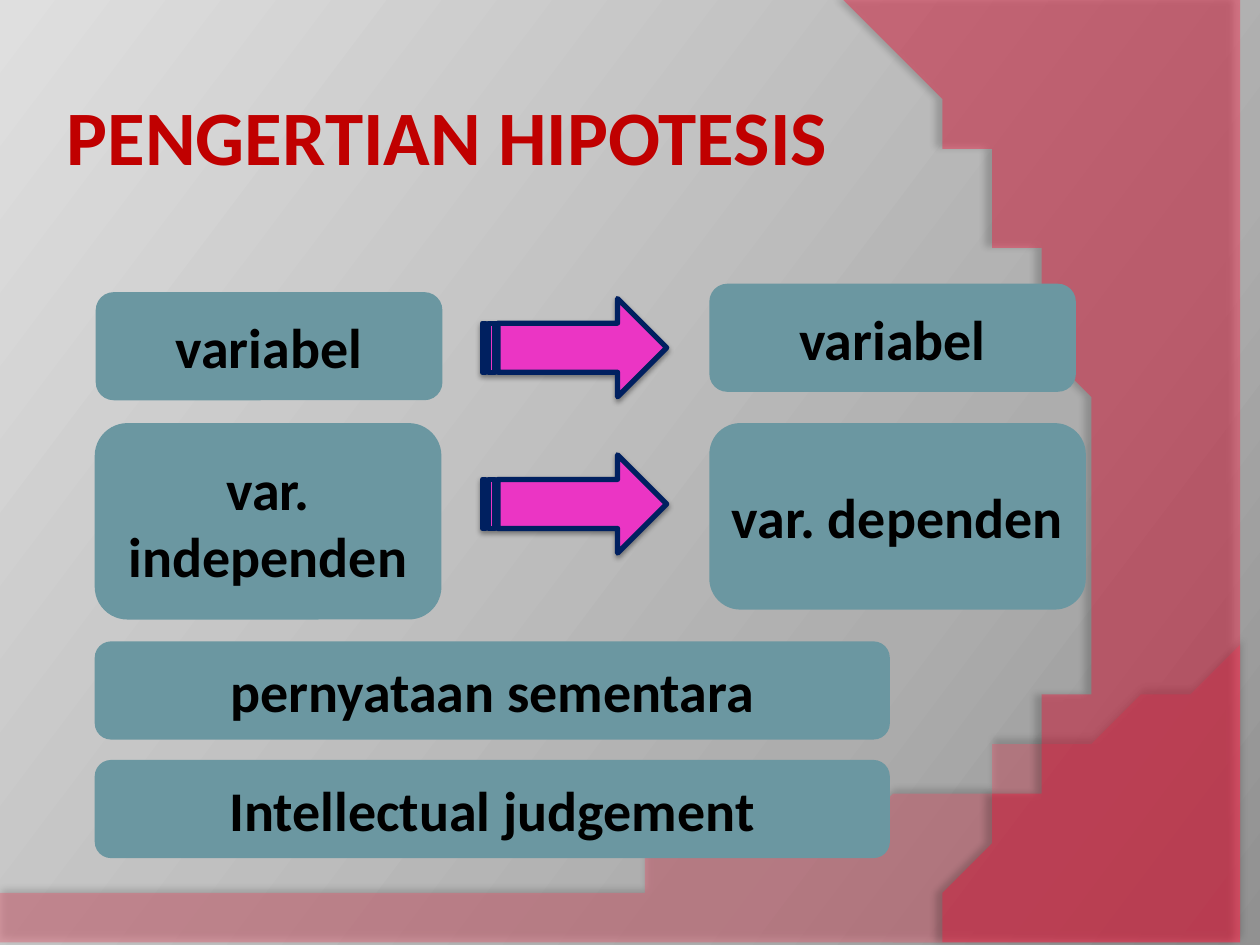
from lxml.etree import SubElement
from pptx import Presentation
from pptx.dml.color import RGBColor
from pptx.enum.shapes import MSO_SHAPE as Preset
from pptx.enum.text import MSO_ANCHOR as Anchor, PP_ALIGN as Align
from pptx.oxml.ns import qn
from pptx.util import Cm, Pt

COLORS = {
    "title": "C00000", "text": "000000", "box": "6B97A1",
    "arrow": "EB35C4", "outline": "002060", "shadow": "000000",
    "wave": "E05E71", "arc": "FF143C",
    "dark": "919191", "middle": "ADADAD", "light": "DFDFDF",
}


def rgb(name):
    return RGBColor.from_string(COLORS[name])


def add_color(parent, name, alpha=None):
    color = SubElement(parent, qn("a:srgbClr"), val=COLORS[name])
    if alpha is not None:
        SubElement(color, qn("a:alpha"), val=str(alpha * 1000))


def add_shadow(shape, alpha, blur, distance, angle):
    effects = shape._element.spPr.find(qn("a:effectLst"))
    shadow = SubElement(
        effects, qn("a:outerShdw"), blurRad=str(Pt(blur)), dist=str(Pt(distance)),
        dir=str(angle * 60000), algn="ctr", rotWithShape="0")
    add_color(shadow, "shadow", alpha)


def set_text(shape, text, size=32, color="text", align=Align.CENTER):
    frame = shape.text_frame
    frame.word_wrap = True
    frame.vertical_anchor = Anchor.MIDDLE
    para = frame.paragraphs[0]
    para.alignment = align
    span = para.add_run()
    span.text = text
    span.font.name = "Calibri"
    span.font.size = Pt(size)
    span.font.bold = True
    span.font.color.rgb = rgb(color)


def add_preset(page, preset, box, fill):
    shape = page.shapes.add_shape(preset, *(Cm(length) for length in box))
    shape.shadow.inherit = False
    shape.fill.solid()
    shape.fill.fore_color.rgb = rgb(fill)
    shape.line.fill.background()
    return shape


def add_label(page, box, text):
    set_text(add_preset(page, Preset.ROUNDED_RECTANGLE, box, "box"), text)


def add_arrow(page, box):
    arrow = add_preset(page, Preset.STRIPED_RIGHT_ARROW, box, "arrow")
    arrow.line.color.rgb = rgb("outline")
    arrow.line.width = Pt(3)
    add_shadow(arrow, 38, 3.1, 1.6, 90)


def curve(start, first, second, end, steps=60):
    for step in range(steps + 1):
        t = step / steps
        weights = ((1 - t) ** 3, 3 * t * (1 - t) ** 2, 3 * t ** 2 * (1 - t), t ** 3)
        yield tuple(sum(w * p[axis] for w, p in zip(weights, (start, first, second, end)))
                    for axis in (0, 1))


def add_swoosh(page, points, fill, alpha, shadow):
    builder = page.shapes.build_freeform(*points[0], scale=Cm(1))
    builder.add_line_segments(points[1:], close=True)
    shape = builder.convert_to_shape()
    shape.shadow.inherit = False
    shape.fill.solid()
    shape.fill.fore_color.rgb = rgb(fill)
    color = shape._element.spPr.find(qn("a:solidFill"))[0]
    SubElement(color, qn("a:alpha"), val=str(alpha * 1000))
    shape.line.fill.background()
    add_shadow(shape, *shadow)


def draw_backdrop(page, width, height):
    fill = page.background.fill
    fill.gradient()
    fill.gradient_angle = 143
    stops = page.background._cSld.find(".//" + qn("a:gsLst"))
    stops.clear()
    for position, name in ((0, "dark"), (30, "middle"), (100, "light")):
        add_color(SubElement(stops, qn("a:gs"), pos=str(position * 1000)), name)

    wave = curve((width, 13.21), (14.2, 18.52), (9.93, 18.26), (0, 17.91))
    add_swoosh(page, [(0, height), (width, height), *wave], "wave", 45, (35, 4, 3.5, 270))
    arc = curve((17.86, height), (22.63, 15.72), (24.05, 6.99), (16.97, 0))
    add_swoosh(page, [(width, 0.05), (width, height), *arc], "arc", 40, (45, 4, 4, 180))


def place_title(page, box, text):
    title = page.shapes.title
    title.left, title.top, title.width, title.height = (Cm(length) for length in box)
    set_text(title, text, size=44, color="title", align=Align.LEFT)
    page.shapes._spTree.append(title._element)


def draw_relation(page, left, top, cause, effect, arrow_top):
    cause_text, cause_x, cause_y, cause_height = cause
    effect_text, effect_y, effect_width, effect_height = effect
    add_label(page, (left + cause_x, top + cause_y, 6.99, cause_height), cause_text)
    add_label(page, (left + 12.39, top + effect_y, effect_width, effect_height), effect_text)
    add_arrow(page, (left + 7.82, top + arrow_top, 3.71, 1.98))


def draw_statements(page, left, top, width, texts):
    for row, text in enumerate(texts):
        add_label(page, (left, top + row * 2.39, width, 1.98), text)


def main():
    deck = Presentation()
    deck.slide_width, deck.slide_height = Cm(25.4), Cm(19.05)
    page = deck.slides.add_slide(deck.slide_layouts[5])
    draw_backdrop(page, 25.4, 19.05)
    place_title(page, (1.09, 1.52, 22.43, 2.41), "PENGERTIAN HIPOTESIS")
    draw_relation(page, 1.91, 5.72, ("variabel", 0.02, 0.17, 2.18),
                  ("variabel", 0, 7.39, 2.18), 0.3)
    draw_relation(page, 1.91, 8.53, ("var. independen", 0, 0, 3.96),
                  ("var. dependen", 0, 7.59, 3.76), 0.64)
    draw_statements(page, 1.91, 12.93, 16.03,
                    ("pernyataan sementara", "Intellectual judgement"))
    deck.save("out.pptx")


if __name__ == "__main__":
    main()
